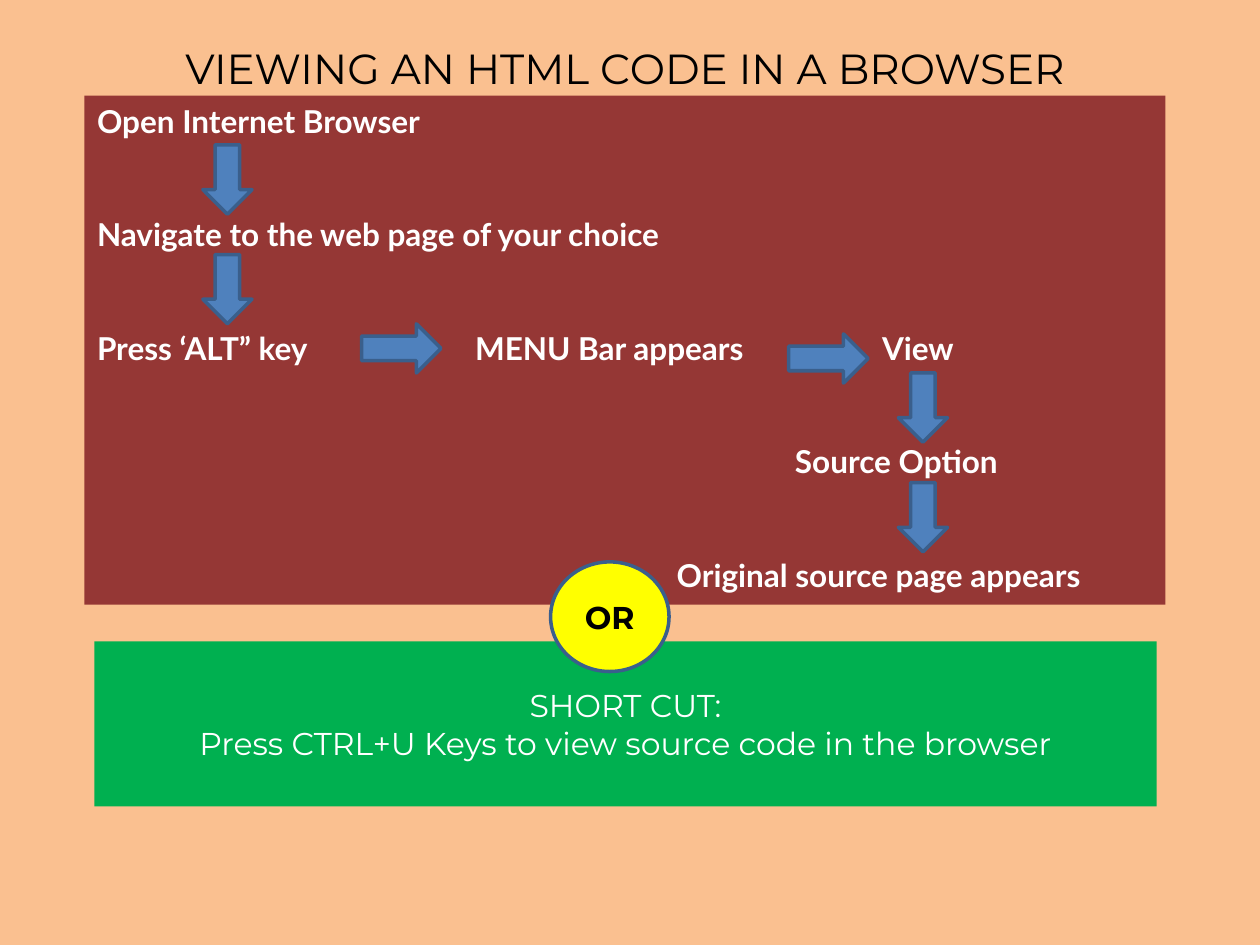
from pptx import Presentation
from pptx import util as u
from pptx.dml.color import RGBColor
from pptx.enum import shapes, text

PEACH = RGBColor(0xFA, 0xC0, 0x90)
MAROON = RGBColor(0x95, 0x37, 0x35)
GREEN = RGBColor(0x00, 0xB0, 0x50)
BLUE = RGBColor(0x4F, 0x81, 0xBD)
NAVY = RGBColor(0x3A, 0x5F, 0x8C)
YELLOW = RGBColor(0xFF, 0xFF, 0x00)
WHITE = RGBColor(0xFF, 0xFF, 0xFF)
BLACK = RGBColor(0x00, 0x00, 0x00)

KIND = shapes.MSO_SHAPE
ALIGN = text.PP_ALIGN
WIDE, HIGH = u.Inches(10), u.Inches(7.5)
COL, ROW = WIDE / 100, HIGH / 75
STEP = 9


def place(box):
    x, y, w, h = box
    return [round(v) for v in (x * COL, y * ROW, w * COL, h * ROW)]


def write(shape, words, font, size, color, bold=False, align=ALIGN.CENTER):
    frame = shape.text_frame
    frame.text = words
    frame.word_wrap = True
    frame.vertical_anchor = text.MSO_ANCHOR.MIDDLE
    frame.margin_left = frame.margin_right = 0
    frame.margin_top = frame.margin_bottom = 0
    for para in frame.paragraphs:
        para.alignment = align
        for run in para.runs:
            run.font.name = font
            run.font.size = u.Pt(size)
            run.font.bold = bold
            run.font.color.rgb = color


def label(slide, box, words, *style, **more):
    write(slide.shapes.add_textbox(*place(box)), words, *style, **more)


def block(slide, kind, box, fill, edge=None):
    shape = slide.shapes.add_shape(kind, *place(box))
    shape.shadow.inherit = False
    shape.fill.solid()
    shape.fill.fore_color.rgb = fill
    if edge is None:
        shape.line.fill.background()
    else:
        shape.line.color.rgb = edge
        shape.line.width = u.Pt(2)
    return shape


def title(slide, box):
    label(slide, box, "VIEWING AN HTML CODE IN A BROWSER", "Montserrat", 24, BLACK)


def flow(slide, box):
    left, top, wide, high = box
    block(slide, KIND.RECTANGLE, box, MAROON)
    steps = [
        (1, 0, "Open Internet Browser"),
        (1, 1, "Navigate to the web page of your choice"),
        (1, 2, "Press ‘ALT” key"),
        (31, 2, "MENU Bar appears"),
        (63.3, 2, "View"),
        (56.4, 3, "Source Option"),
        (47, 4, "Original source page appears"),
    ]
    for x, row, words in steps:
        spot = (left + x, top + 0.5 + row * STEP, wide - x, 3)
        label(slide, spot, words, "Lato", 18, WHITE, bold=True, align=ALIGN.LEFT)
    for x, y in ((9.4, 3.9), (64.6, 22)):
        for drop in (0, 8.7):
            spot = (left + x, top + y + drop, 3.9, 5.5)
            block(slide, KIND.DOWN_ARROW, spot, BLUE, NAVY)
    for x, y in ((22, 18.1), (55.9, 18.9)):
        spot = (left + x, top + y, 6.3, 3.9)
        block(slide, KIND.RIGHT_ARROW, spot, BLUE, NAVY)


def shortcut(slide, box):
    panel = block(slide, KIND.RECTANGLE, box, GREEN)
    words = "SHORT CUT:\nPress CTRL+U Keys to view source code in the browser"
    write(panel, words, "Montserrat", 18, WHITE)


def badge(slide, box):
    disc = block(slide, KIND.OVAL, box, YELLOW, NAVY)
    write(disc, "OR", "Montserrat", 18, BLACK, bold=True)


def main():
    deck = Presentation()
    deck.slide_width, deck.slide_height = WIDE, HIGH
    slide = deck.slides.add_slide(deck.slide_layouts[6])
    slide.background.fill.solid()
    slide.background.fill.fore_color.rgb = PEACH
    title(slide, (4.3, 2.9, 90.6, 5))
    flow(slide, (6.7, 7.6, 85.8, 40.4))
    shortcut(slide, (7.5, 50.9, 84.3, 13.1))
    badge(slide, (43.7, 44.6, 9.4, 8.7))
    deck.save("out.pptx")


if __name__ == "__main__":
    main()
